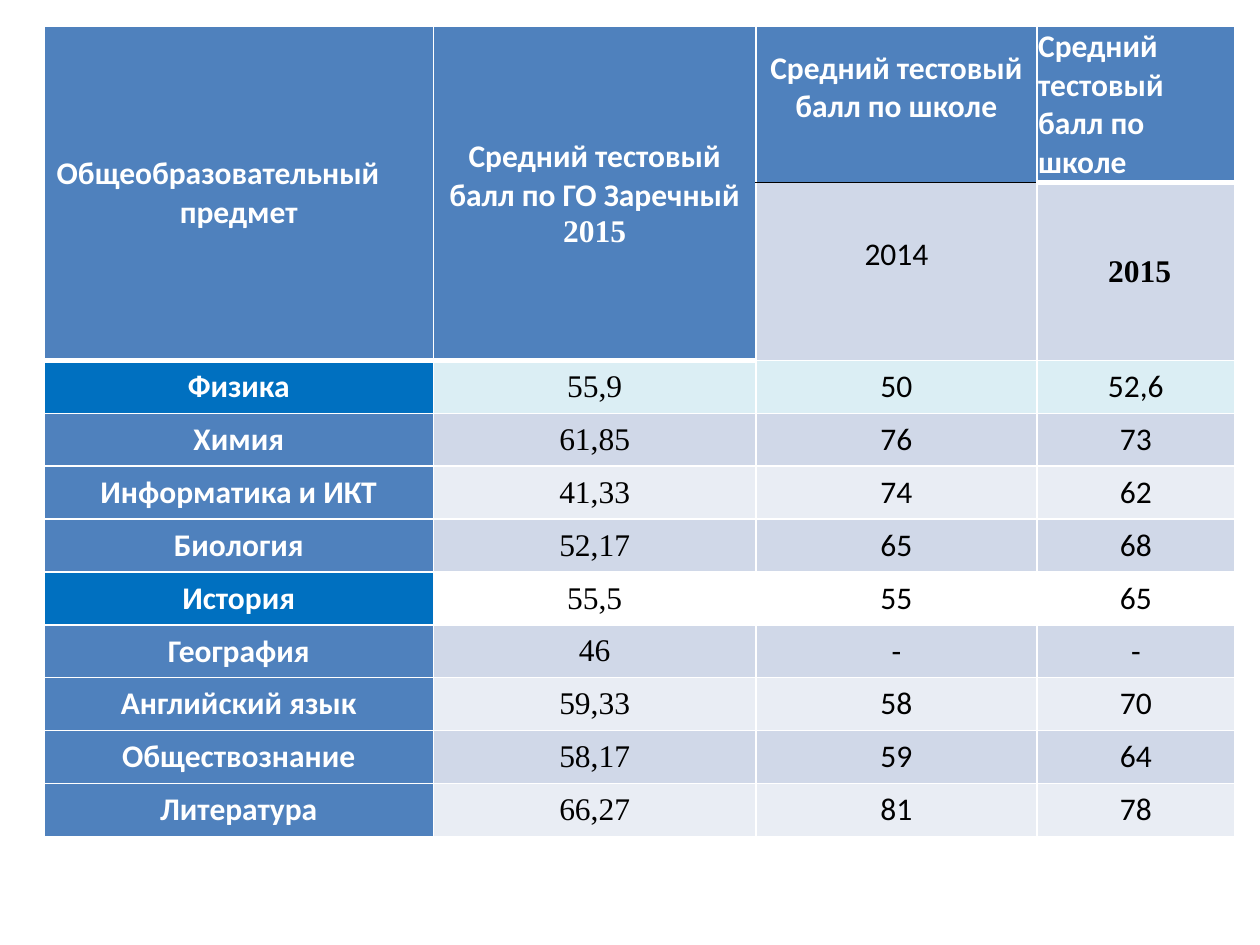
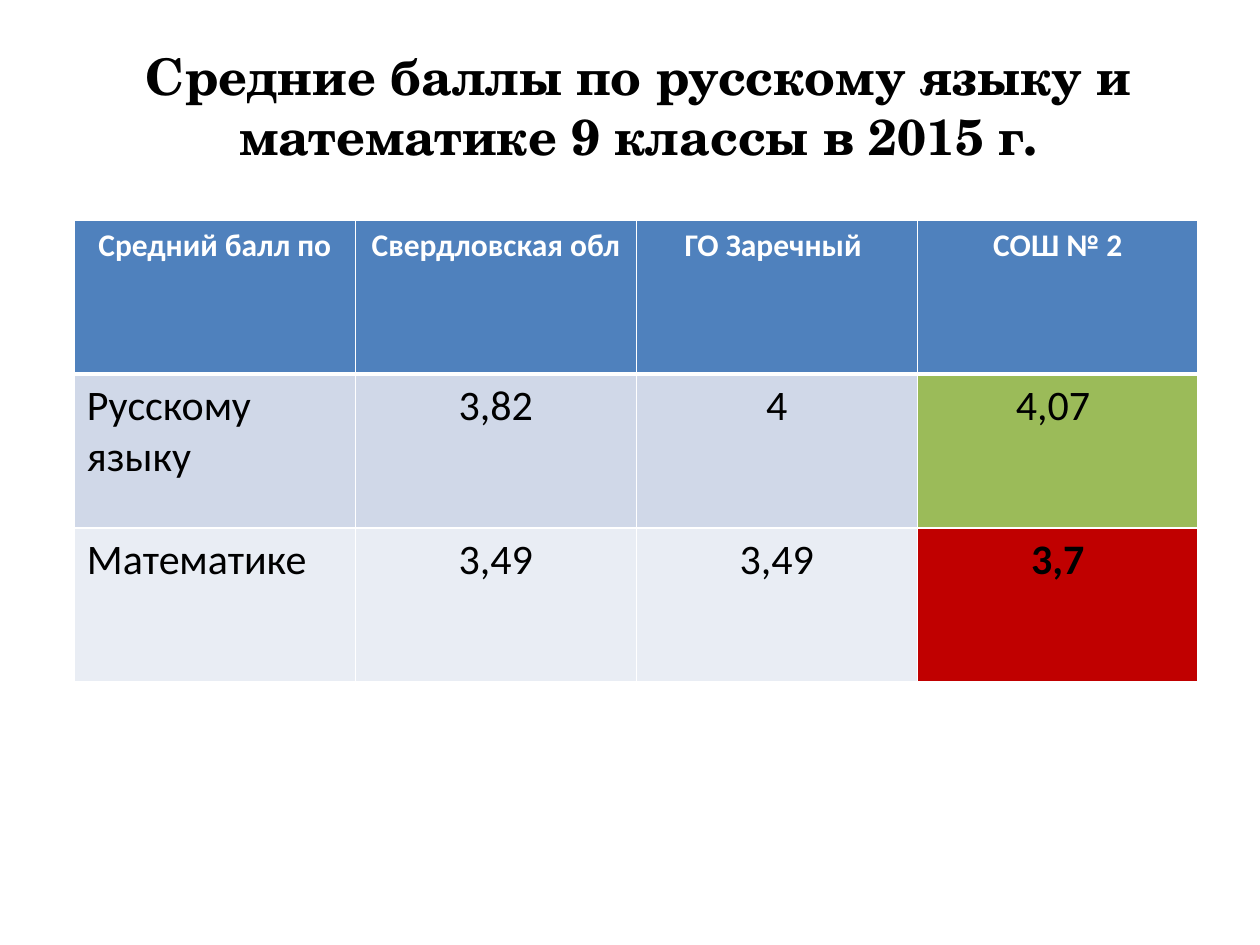
from dataclasses import dataclass

from lxml.etree import SubElement
from pptx import Presentation
from pptx.dml.color import RGBColor
from pptx.enum.text import MSO_ANCHOR, MSO_AUTO_SIZE, PP_ALIGN
from pptx.oxml.ns import qn
from pptx.util import Inches, Pt


@dataclass(frozen=True)
class Theme:
    header: str = "4F81BD"
    accent: str = "0070C0"
    bands: tuple = ("E9EDF4", "D0D8E8")
    physics: str = "DBEEF4"
    good: str = "9BBB59"
    alarm: str = "C00000"
    white: str = "FFFFFF"
    black: str = "000000"
    body_font: str = "Calibri"
    serif_font: str = "Times New Roman"
    title_font: str = "TeX Gyre Schola"
    title_size: float = 28.8
    text_size: float = 18
    score_size: float = 24


THEME = Theme()
THIN = (THEME.white, 1)
THICK = (THEME.white, 3)
BLACK_RULE = (THEME.black, 1)
TIGHT = Inches(0.01)

SUBJECT_SCORES = [
    ("Физика", "55,9", "50", "52,6"),
    ("Химия", "61,85", "76", "73"),
    ("Информатика и ИКТ", "41,33", "74", "62"),
    ("Биология", "52,17", "65", "68"),
    ("История", "55,5", "55", "65"),
    ("География", "46", "-", "-"),
    ("Английский язык", "59,33", "58", "70"),
    ("Обществознание", "58,17", "59", "64"),
    ("Литература", "66,27", "81", "78"),
]
HIGHLIGHTS = {"Физика": THEME.physics, "История": THEME.white}

REGION_HEADER = ["Средний балл по", "Свердловская обл", "ГО Заречный ", "СОШ № 2"]
REGION_SCORES = [
    ("Русскому языку", "3,82", "4", "4,07 "),
    ("Математике", "3,49", "3,49", "3,7"),
]
SCHOOL_FILLS = [THEME.good, THEME.alarm]


def format_paragraph(paragraph, align=PP_ALIGN.CENTER, font=THEME.body_font,
                     size=THEME.text_size, color=THEME.black, bold=False):
    paragraph.alignment = align
    for run in paragraph.runs:
        for key, value in dict(name=font, size=Pt(size), bold=bold).items():
            setattr(run.font, key, value)
        run.font.color.rgb = RGBColor.from_string(color)


def fill_cell(cell, text, fill, **text_format):
    cell.text = text
    cell.fill.solid()
    cell.fill.fore_color.rgb = RGBColor.from_string(fill)
    for paragraph in cell.text_frame.paragraphs:
        format_paragraph(paragraph, **text_format)


def fill_header(cell, text, **text_format):
    fill_cell(cell, text, THEME.header,
              **{"color": THEME.white, "bold": True, **text_format})


def tighten(cell):
    cell.vertical_anchor = MSO_ANCHOR.MIDDLE
    for side in ("left", "right", "top", "bottom"):
        setattr(cell, f"margin_{side}", TIGHT)


def draw_borders(table, special):
    """Rule every cell; special maps (horizontal line, column) to a colour and width."""
    for row in range(len(table.rows)):
        for col in range(len(table.columns)):
            edges = {"lnL": THIN, "lnR": THIN,
                     "lnT": special.get((row, col), THIN),
                     "lnB": special.get((row + 1, col), THIN)}
            properties = table.cell(row, col)._tc.get_or_add_tcPr()
            for place, (tag, (color, width)) in enumerate(edges.items()):
                line = SubElement(properties, qn(f"a:{tag}"), w=str(Pt(width)))
                SubElement(SubElement(line, qn("a:solidFill")), qn("a:srgbClr"), val=color)
                properties.insert(place, line)


def add_plain_table(slide, left, top, widths, heights):
    table = slide.shapes.add_table(
        len(heights), len(widths), Inches(left), Inches(top),
        Inches(sum(widths)), Inches(sum(heights))).table
    table.first_row = table.horz_banding = False
    for column, width in zip(table.columns, widths):
        column.width = Inches(width)
    for row, height in zip(table.rows, heights):
        row.height = Inches(height)
    return table


def fill_subject_header(table):
    subject, district, year_before, year_now = (table.cell(0, col) for col in range(4))
    for col in (0, 1):
        table.cell(0, col).merge(table.cell(1, col))

    fill_header(subject, "Общеобразовательный\nпредмет")
    first_line = subject.text_frame.paragraphs[0]
    first_line.alignment = PP_ALIGN.LEFT
    first_line._p.get_or_add_pPr().set("marL", str(Inches(0.09)))

    fill_header(district, "Средний тестовый балл по ГО Заречный\n2015")
    format_paragraph(district.text_frame.paragraphs[1], font=THEME.serif_font,
                     color=THEME.white, bold=True)

    school = "Средний тестовый балл по школе"
    fill_header(year_before, school)
    fill_header(year_now, school, align=PP_ALIGN.LEFT)
    fill_cell(table.cell(1, 2), "2014", THEME.bands[1])
    fill_cell(table.cell(1, 3), " 2015", THEME.bands[1], font=THEME.serif_font, bold=True)


def build_subject_slide(deck, left=0.35, top=0.21):
    slide = deck.slides.add_slide(deck.slide_layouts[6])
    table = add_plain_table(slide, left, top, [3.09, 2.56, 2.23, 1.57],
                            [1.24, 1.41] + [0.42] * len(SUBJECT_SCORES))
    fill_subject_header(table)
    for row, (subject, *scores) in enumerate(SUBJECT_SCORES, start=2):
        label_fill = THEME.accent if subject in HIGHLIGHTS else THEME.header
        fill_cell(table.cell(row, 0), subject, label_fill, color=THEME.white, bold=True)
        band = HIGHLIGHTS.get(subject, THEME.bands[row % 2])
        fonts = (THEME.serif_font, THEME.body_font, THEME.body_font)
        for col, (score, font) in enumerate(zip(scores, fonts), start=1):
            fill_cell(table.cell(row, col), score, band, font=font)
    for cell in table.iter_cells():
        tighten(cell)
    for row in (0, 1):
        table.cell(row, 2).margin_bottom = Inches(0.28)
    draw_borders(table, {(2, 0): THICK, (2, 1): THICK,
                         (1, 2): BLACK_RULE, (1, 3): THICK})


def place_title(slide, text, left, top, width, height):
    title = slide.shapes.title
    box = dict(left=left, top=top, width=width, height=height)
    for key, value in box.items():
        setattr(title, key, Inches(value))
    frame = title.text_frame
    frame.text = text
    frame_format = dict(word_wrap=True, auto_size=MSO_AUTO_SIZE.NONE,
                        vertical_anchor=MSO_ANCHOR.MIDDLE)
    for key, value in frame_format.items():
        setattr(frame, key, value)
    format_paragraph(frame.paragraphs[0], font=THEME.title_font,
                     size=THEME.title_size, bold=True)


def build_region_slide(deck, left=0.59, top=1.75):
    slide = deck.slides.add_slide(deck.slide_layouts[5])
    place_title(slide, "Средние баллы по русскому языку и математике 9 классы в 2015 г.",
                0.67, 0.28, 8.8, 1.11)
    table = add_plain_table(slide, left, top, [2.23] * 4, [1.22] * 3)
    for col, heading in enumerate(REGION_HEADER):
        fill_header(table.cell(0, col), heading)
    for row, (scores, school_fill) in enumerate(zip(REGION_SCORES, SCHOOL_FILLS), start=1):
        fills = [THEME.bands[row % 2]] * 3 + [school_fill]
        for col, (text, fill) in enumerate(zip(scores, fills)):
            fill_cell(table.cell(row, col), text, fill, size=THEME.score_size,
                      align=PP_ALIGN.CENTER if col else PP_ALIGN.LEFT,
                      bold=fill == THEME.alarm)
    draw_borders(table, {(1, col): THICK for col in range(4)})


def main():
    deck = Presentation()
    deck.slide_width, deck.slide_height = Inches(10), Inches(7.5)
    build_subject_slide(deck)
    build_region_slide(deck)
    deck.save("out.pptx")


if __name__ == "__main__":
    main()
